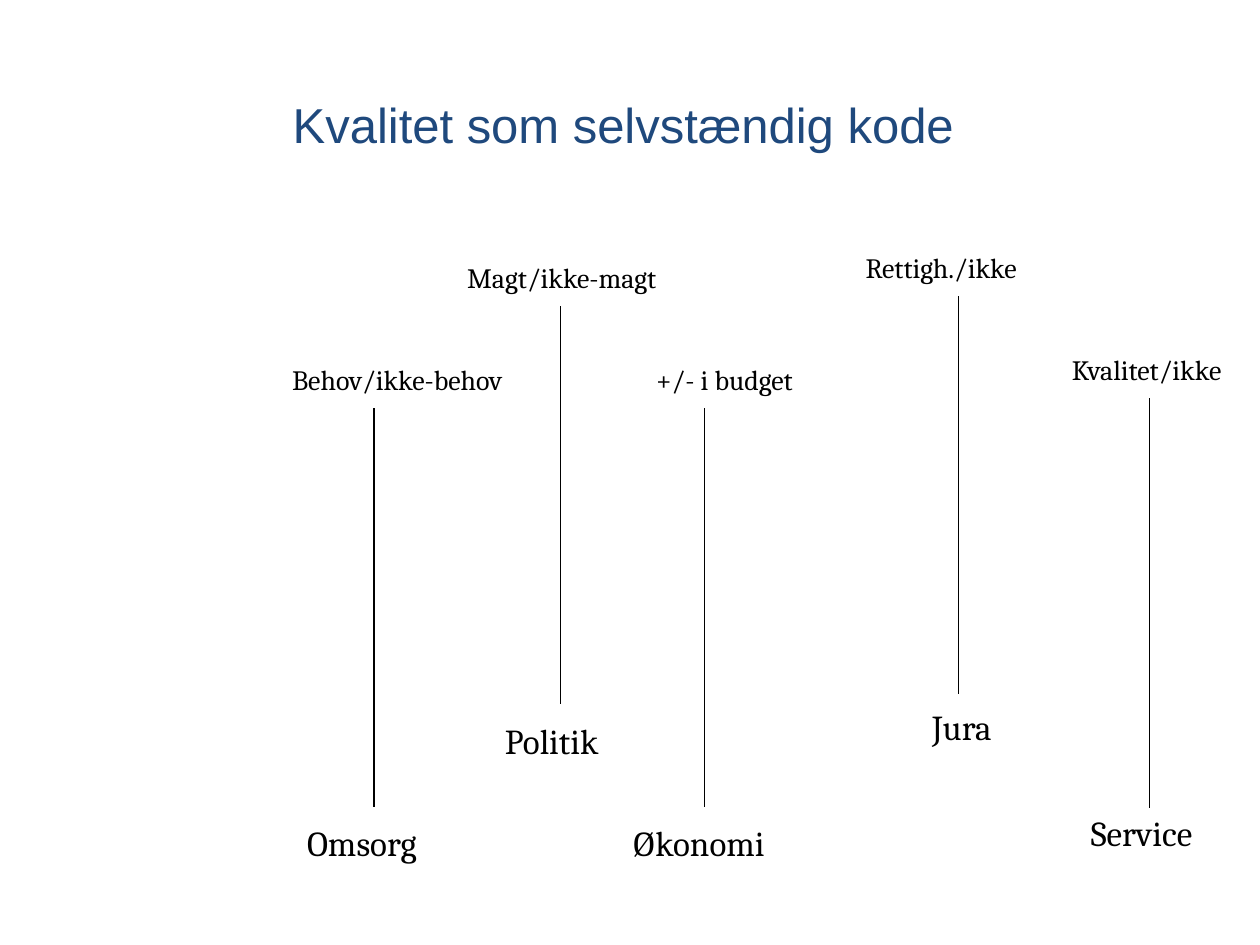
from dataclasses import dataclass

from lxml import etree
from pptx import Presentation
from pptx.dml.color import RGBColor
from pptx.enum.shapes import MSO_CONNECTOR
from pptx.enum.text import MSO_ANCHOR, MSO_AUTO_SIZE, PP_ALIGN
from pptx.oxml.ns import qn
from pptx.util import Cm, Pt

STRAIGHT = MSO_CONNECTOR.STRAIGHT
MIDDLE, TOP = MSO_ANCHOR.MIDDLE, MSO_ANCHOR.TOP
CENTER, LEFT = PP_ALIGN.CENTER, PP_ALIGN.LEFT
FIT_SHAPE, NO_FIT = MSO_AUTO_SIZE.SHAPE_TO_FIT_TEXT, MSO_AUTO_SIZE.NONE
BLANK_LAYOUT = 6


@dataclass(frozen=True)
class Theme:
    title_color: RGBColor = RGBColor(0x1F, 0x49, 0x7D)
    ink: RGBColor = RGBColor(0, 0, 0)
    title_font: str = "Arial"
    body_font: str = "Cambria"
    title_size: int = 28
    system_size: int = 20
    code_size: int = 16
    line_width: float = 0.75


@dataclass(frozen=True)
class FunctionSystem:
    """A social system and its code, joined by a vertical line; lengths in cm."""
    name: str
    name_left: float
    name_top: float
    name_width: float
    code: str
    code_left: float
    code_top: float
    code_width: float
    line_x: float
    line_length: float = 8.03


NAME_HEIGHT, CODE_HEIGHT = 1.09, 0.94
CODE_TO_LINE = 1.04

SYSTEMS = [
    FunctionSystem("Økonomi", 12.5, 16.43, 3.51,
                   "+/- i budget", 12.98, 7.19, 3.66, 14.2),
    FunctionSystem("Politik", 9.93, 14.38, 2.57,
                   "Magt/ikke-magt", 9.17, 5.13, 4.52, 11.3),
    FunctionSystem("Jura", 18.54, 14.1, 1.8,
                   "Rettigh./ikke", 17.2, 4.93, 3.71, 19.33),
    FunctionSystem("Service", 21.74, 16.23, 2.77,
                   "Kvalitet/ikke", 21.36, 6.99, 3.73, 23.17, 8.25),
    FunctionSystem("Omsorg", 5.94, 16.43, 3.05,
                   "Behov/ikke-behov", 5.64, 7.19, 5.05, 7.54),
]


def set_values(target, values):
    for name, value in values.items():
        setattr(target, name, value)


class SlideBuilder:
    def __init__(self, page, theme):
        self.page = page
        self.theme = theme

    def text(self, shapes, words, bounds, font, frame, align=LEFT):
        box = shapes.add_textbox(*map(Cm, bounds))
        set_values(box.text_frame, frame)
        para = box.text_frame.paragraphs[0]
        para.alignment = align
        span = para.add_run()
        span.text = words
        name, size, color = font
        set_values(span.font, {"name": name, "size": Pt(size)})
        span.font.color.rgb = color

    def title(self, words, bounds):
        theme = self.theme
        font = (theme.title_font, theme.title_size, theme.title_color)
        frame = {"word_wrap": True, "auto_size": NO_FIT, "vertical_anchor": MIDDLE}
        self.text(self.page.shapes, words, bounds, font, frame, CENTER)

    def label(self, shapes, words, bounds, size):
        font = (self.theme.body_font, size, self.theme.ink)
        frame = {"word_wrap": False, "auto_size": FIT_SHAPE, "vertical_anchor": TOP}
        self.text(shapes, words, bounds, font, frame)

    def vertical_line(self, shapes, x, top, length):
        line = shapes.add_connector(STRAIGHT, Cm(x), Cm(top), Cm(x), Cm(top + length))
        line.line.color.rgb = self.theme.ink
        line.line.width = Pt(self.theme.line_width)
        etree.SubElement(line._element.spPr, qn("a:effectLst"))

    def system(self, item):
        shapes = self.page.shapes.add_group_shape().shapes
        self.label(shapes, item.name,
                   (item.name_left, item.name_top, item.name_width, NAME_HEIGHT),
                   self.theme.system_size)
        self.label(shapes, item.code,
                   (item.code_left, item.code_top, item.code_width, CODE_HEIGHT),
                   self.theme.code_size)
        self.vertical_line(shapes, item.line_x, item.code_top + CODE_TO_LINE,
                           item.line_length)


def main():
    deck = Presentation()
    set_values(deck, {"slide_width": Cm(25.4), "slide_height": Cm(19.05)})
    page = deck.slides.add_slide(deck.slide_layouts[BLANK_LAYOUT])
    builder = SlideBuilder(page, Theme())
    builder.title("Kvalitet som selvstændig kode ", (3.3, 0.91, 18.8, 3.18))
    for item in SYSTEMS:
        builder.system(item)
    deck.save("out.pptx")


if __name__ == "__main__":
    main()
